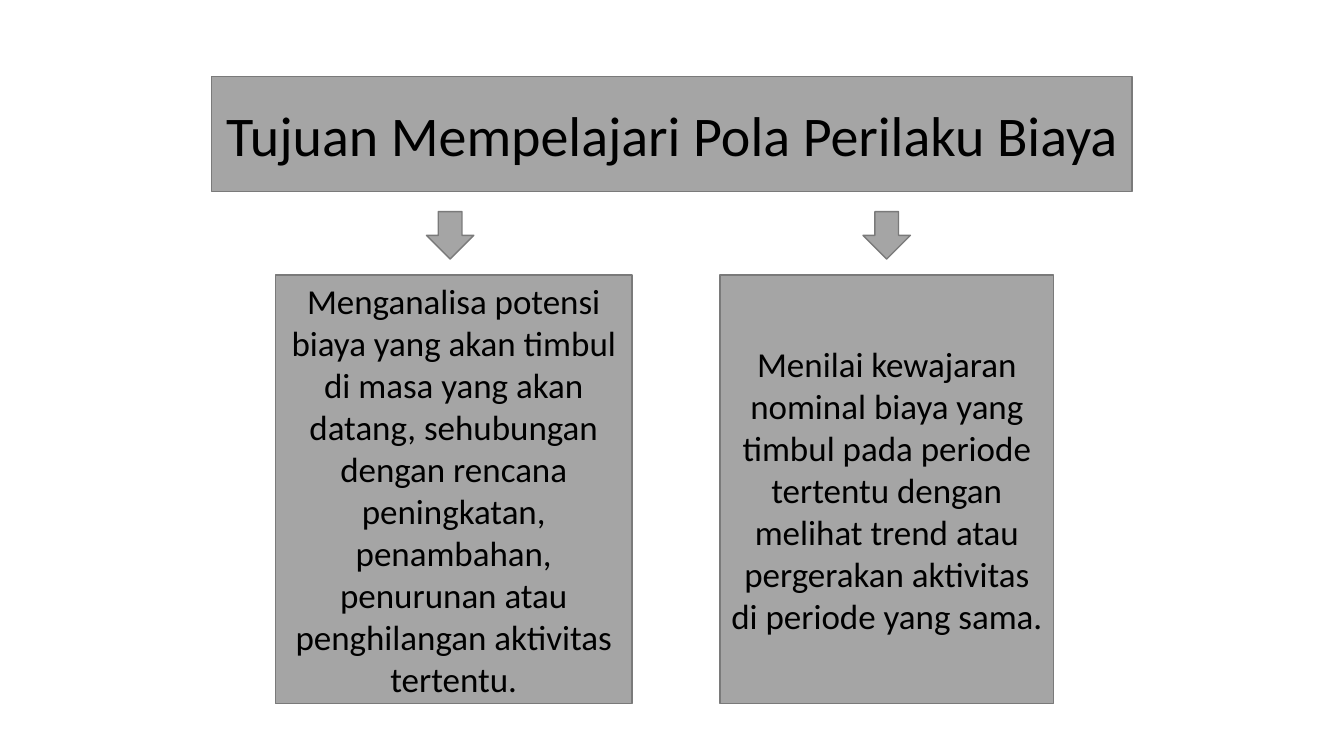
import pptx
import pptx.dml.color
import pptx.enum.shapes
import pptx.enum.text
import pptx.util
from dataclasses import dataclass

Inches = pptx.util.Inches
SHAPES = pptx.enum.shapes.MSO_SHAPE


@dataclass(frozen=True)
class Theme:
    font: str = "Calibri"
    fill: str = "A5A5A5"
    outline: str = "7A7A7A"
    text: str = "000000"
    title_size: int = 40
    body_size: int = 25
    outline_width: int = 1


class SlideBuilder:
    def __init__(self, slide, theme):
        self.slide = slide
        self.theme = theme

    def add_grey_shape(self, kind, left, top, width, height):
        """Add a preset shape, measured in inches, in the theme's fill and outline."""
        shape = self.slide.shapes.add_shape(
            kind, Inches(left), Inches(top), Inches(width), Inches(height))
        shape.shadow.inherit = False
        shape.fill.solid()
        shape.fill.fore_color.rgb = pptx.dml.color.RGBColor.from_string(self.theme.fill)
        shape.line.color.rgb = pptx.dml.color.RGBColor.from_string(self.theme.outline)
        shape.line.width = pptx.util.Pt(self.theme.outline_width)
        return shape

    def add_box(self, text, size, left, top, width, height):
        box = self.add_grey_shape(SHAPES.RECTANGLE, left, top, width, height)
        frame = box.text_frame
        frame.word_wrap = True
        frame.vertical_anchor = pptx.enum.text.MSO_ANCHOR.MIDDLE
        paragraph = frame.paragraphs[0]
        paragraph.alignment = pptx.enum.text.PP_ALIGN.CENTER
        run = paragraph.add_run()
        run.text = text
        font_format = {"name": self.theme.font, "size": pptx.util.Pt(size)}
        for attribute, value in font_format.items():
            setattr(run.font, attribute, value)
        run.font.color.rgb = pptx.dml.color.RGBColor.from_string(self.theme.text)

    def add_down_arrow(self, left, top, side):
        self.add_grey_shape(SHAPES.DOWN_ARROW, left, top, side, side)


def main():
    presentation = pptx.Presentation()
    presentation.slide_width = Inches(13.33)
    presentation.slide_height = Inches(7.5)
    slide = presentation.slides.add_slide(presentation.slide_layouts[6])
    theme = Theme()
    builder = SlideBuilder(slide, theme)

    builder.add_box("Tujuan Mempelajari Pola Perilaku Biaya",
                    theme.title_size, 2.1, 0.76, 9.13, 1.14)

    # Each purpose: text, box left, box width, arrow left
    purposes = [
        ("Menganalisa potensi biaya yang akan timbul di masa yang akan datang, "
         "sehubungan dengan rencana peningkatan, penambahan, penurunan atau "
         "penghilangan aktivitas tertentu.", 2.73, 3.54, 4.23),
        ("Menilai kewajaran nominal biaya yang timbul pada periode tertentu "
         "dengan melihat trend atau pergerakan aktivitas di periode yang sama.",
         7.14, 3.31, 8.56),
    ]
    for purpose, box_left, box_width, arrow_left in purposes:
        builder.add_box(purpose, theme.body_size, box_left, 2.73, box_width, 4.25)
        builder.add_down_arrow(arrow_left, 2.1, 0.47)

    presentation.save("out.pptx")


if __name__ == "__main__":
    main()
